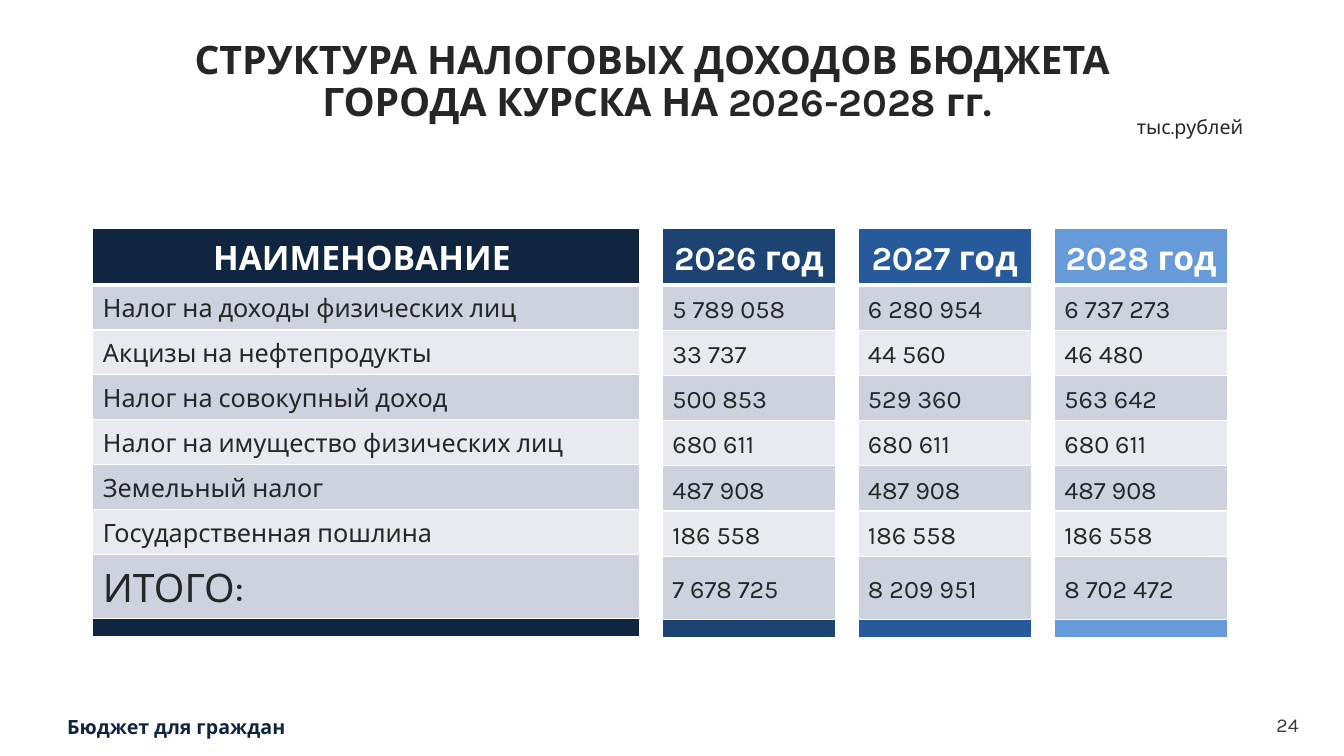
"""Build the slide on the structure of the city's tax revenues for 2026-2028."""
from lxml.etree import SubElement
from pptx import Presentation
from pptx.dml.color import RGBColor
from pptx.enum.text import MSO_ANCHOR as ANCHOR, PP_ALIGN as ALIGN
from pptx.oxml.ns import qn
from pptx.util import Cm, Pt


def rgb(value):
    return RGBColor.from_string(value)


def write(tf, text, size, color, bold=False, align=ALIGN.LEFT, **spacing):
    p = tf.paragraphs[0]
    p.text = text
    for name, value in {"alignment": align, **spacing}.items():
        setattr(p, name, value)
    for r in p.runs:
        for name, value in {"name": "Karla", "size": Pt(size), "bold": bold}.items():
            setattr(r.font, name, value)
        r.font.color.rgb = rgb(color)


prs = Presentation()
prs.slide_width, prs.slide_height = Cm(33.87), Cm(19.05)
s = prs.slides.add_slide(prs.slide_layouts[6])

INK, NAVY, WHITE = "262626", "10253F", "FFFFFF"
BANDS = ["CDD2DE", "E8EAEF"]
TITLE = "СТРУКТУРА НАЛОГОВЫХ ДОХОДОВ БЮДЖЕТА \vГОРОДА КУРСКА НА 2026-2028 гг."

labels = [
    (1.47, 1.12, 30.18, 1.93, 0.25, ANCHOR.MIDDLE, TITLE,
     {"size": 28, "color": INK, "bold": True, "align": ALIGN.CENTER, "line_spacing": 0.9}),
    (28.4, 2.77, 4.37, 0.86, 0.25, ANCHOR.TOP, "тыс.рублей", {"size": 14, "color": INK}),
    (1.69, 18.01, 30.16, 0.61, 0, ANCHOR.TOP, "Бюджет для граждан",
     {"size": 14, "color": NAVY, "bold": True}),
    (31.83, 17.96, 0.9, 0.61, 0, ANCHOR.MIDDLE, "24",
     {"size": 14, "color": "3C3C3C", "align": ALIGN.RIGHT}),
]
for left, top, width, height, inset, anchor, text, style in labels:
    tf = s.shapes.add_textbox(Cm(left), Cm(top), Cm(width), Cm(height)).text_frame
    frame = {"word_wrap": True, "vertical_anchor": anchor,
             "margin_left": Cm(inset), "margin_right": Cm(inset),
             "margin_top": Cm(inset / 2), "margin_bottom": Cm(inset / 2)}
    for name, value in frame.items():
        setattr(tf, name, value)
    write(tf, text, **style)

tables = [
    (2.34, 13.77, 1.11, NAVY, ANCHOR.TOP, 28, "НАИМЕНОВАНИЕ ",
     ["Налог на доходы физических лиц", "Акцизы на нефтепродукты",
      "Налог на совокупный доход", "Налог на имущество физических лиц",
      "Земельный налог", "Государственная пошлина", "ИТОГО:"]),
    (16.69, 4.37, 1.14, "1D4373", ANCHOR.MIDDLE, 18, "2026 год",
     ["5 789 058", "33 737", "500 853", "680 611", "487 908", "186 558", "7 678 725"]),
    (21.62, 4.37, 1.14, "265A9A", ANCHOR.MIDDLE, 18, "2027 год",
     ["6 280 954", "44 560", "529 360", "680 611", "487 908", "186 558", "8 209 951"]),
    (26.57, 4.37, 1.14, "669AD9", ANCHOR.MIDDLE, 18, "2028 год",
     ["6 737 273", "46 480", "563 642", "680 611", "487 908", "186 558", "8 702 472"]),
]
for left, width, step, accent, anchor, total_size, header, values in tables:
    heights = [1.4] + [step] * 6 + [1.59, 0.45]
    table = s.shapes.add_table(len(heights), 1, Cm(left), Cm(5.76),
                               Cm(width), Cm(sum(heights))).table
    table.first_row = table.horz_banding = False
    last = len(heights) - 1
    for i, (height, text) in enumerate(zip(heights, [header, *values, ""])):
        table.rows[i].height = Cm(height)
        cell = table.cell(i, 0)
        tcPr = cell._tc.get_or_add_tcPr()
        for side in "LRTB":
            thick = (i, side) in [(0, "B"), (1, "T")]
            ln = SubElement(tcPr, qn(f"a:ln{side}"), w=str(Pt(3 if thick else 1)))
            SubElement(SubElement(ln, qn("a:solidFill")), qn("a:srgbClr"), val=WHITE)
        cell.fill.solid()
        cell.fill.fore_color.rgb = rgb(accent if i in (0, last) else BANDS[(i - 1) % 2])
        if i == last:
            cell.margin_top = cell.margin_bottom = 0
            SubElement(cell.text_frame.paragraphs[0]._p, qn("a:endParaRPr"), sz="500")
            continue
        style = {"size": total_size if i == last - 1 else 18, "color": INK}
        if i == 0:
            style = {"size": 24, "color": WHITE, "bold": True, "align": ALIGN.CENTER}
        else:
            cell.vertical_anchor = anchor
        write(cell.text_frame, text, line_spacing=1.15, space_after=Pt(10), **style)

prs.save("out.pptx")
